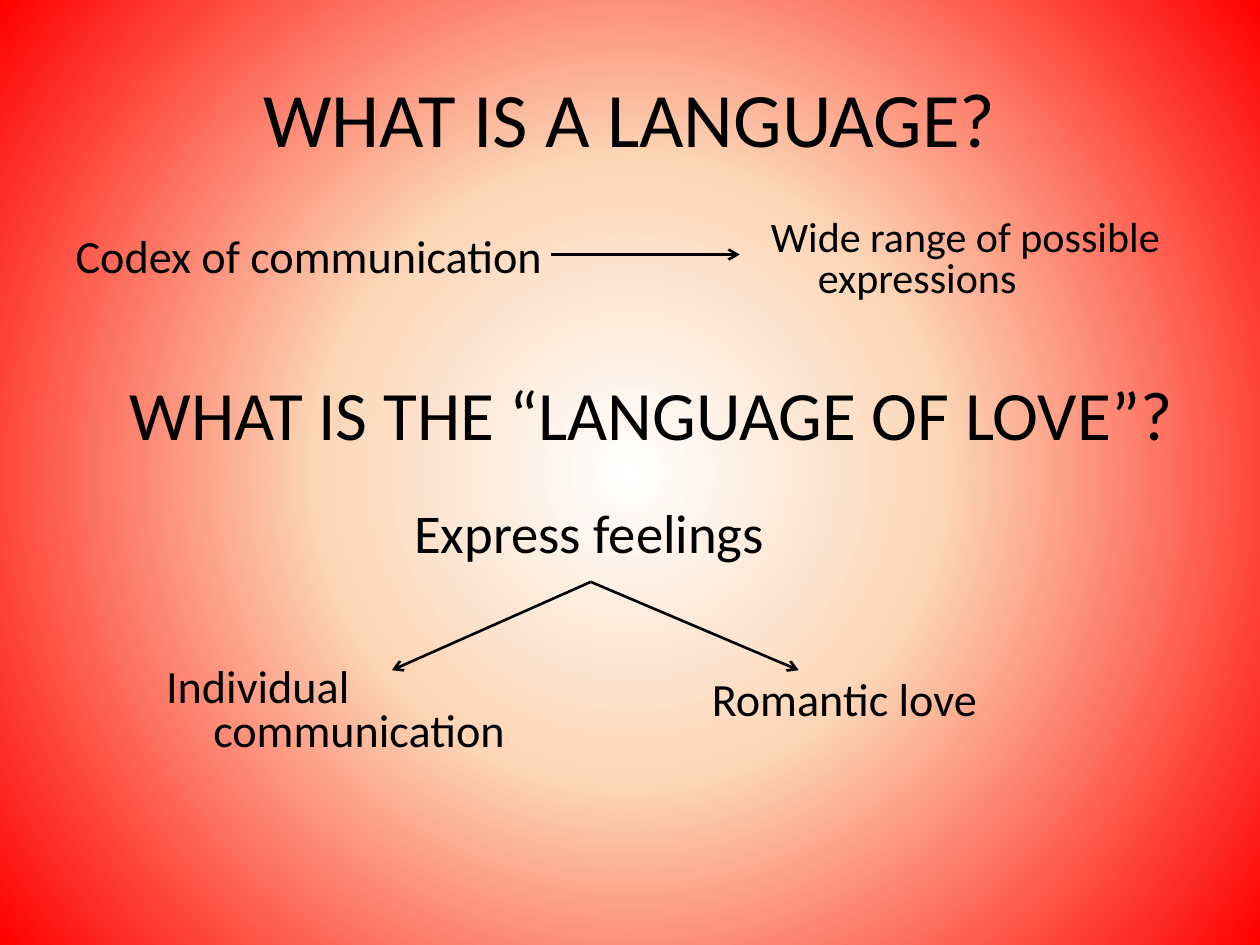
from dataclasses import dataclass

from lxml import etree
from pptx import Presentation
from pptx.dml.color import RGBColor
from pptx.enum.shapes import MSO_CONNECTOR
from pptx.enum.text import MSO_ANCHOR, MSO_AUTO_SIZE, PP_ALIGN
from pptx.oxml import parse_xml
from pptx.oxml.ns import nsdecls, qn
from pptx.util import Cm, Pt

STRAIGHT = MSO_CONNECTOR.STRAIGHT
TOP, MIDDLE = MSO_ANCHOR.TOP, MSO_ANCHOR.MIDDLE
LEFT, CENTER = PP_ALIGN.LEFT, PP_ALIGN.CENTER


@dataclass(frozen=True)
class Theme:
    font: str = "Calibri"
    ink: str = "000000"
    glow: tuple = ((0, "FFFFFF"), (40, "FCD5B5"), (100, "FF0000"))
    title: float = 44
    subtitle: float = 39.6
    feelings: float = 31.2
    item: float = 26.4
    small_item: float = 24
    line: float = 1.5


THEME = Theme()
INK = RGBColor.from_string(THEME.ink)
HANGING = Cm(0.95)
HEADING_SIZE = (22.86, 3.18)
ITEM_HEIGHT = 2.08


def write_text(shape, text, *, box, size, heading=False, line_spacing=1.0):
    """Place the shape at box (cm) and fill it with a heading or a hanging list item."""
    shape.left, shape.top, shape.width, shape.height = map(Cm, box)
    frame = shape.text_frame
    frame.word_wrap = True
    frame.auto_size = MSO_AUTO_SIZE.NONE
    frame.vertical_anchor = MIDDLE if heading else TOP
    paragraph = frame.paragraphs[0]
    paragraph.alignment = CENTER if heading else LEFT
    paragraph.line_spacing = line_spacing
    if not heading:
        paragraph.space_before = Pt(round(size * 0.2, 1))
        properties = paragraph._p.get_or_add_pPr()
        properties.set("marL", str(HANGING))
        properties.set("indent", str(-HANGING))
        etree.SubElement(properties, qn("a:buNone"))
    run = paragraph.add_run()
    run.text = text
    run.font.name = THEME.font
    run.font.size = Pt(size)
    run.font.color.rgb = INK


presentation = Presentation()
presentation.slide_width, presentation.slide_height = Cm(25.4), Cm(19.05)
slide = presentation.slides.add_slide(presentation.slide_layouts[1])

# Background: a glow from the centre of the slide
slide.background.fill.solid()
stops = "".join(
    f'<a:gs pos="{position * 1000}"><a:srgbClr val="{color}"/></a:gs>'
    for position, color in THEME.glow
)
gradient = parse_xml(
    f'<a:gradFill {nsdecls("a")} rotWithShape="1"><a:gsLst>{stops}</a:gsLst>'
    '<a:path path="circle"><a:fillToRect l="50000" t="50000" r="50000" b="50000"/></a:path>'
    "</a:gradFill>"
)
background = slide.element.find(".//" + qn("p:bgPr"))
background.replace(background[0], gradient)

# Title and first list item
write_text(slide.shapes.title, "WHAT IS A LANGUAGE?",
           box=(1.27, 0.76, *HEADING_SIZE), size=THEME.title, heading=True)
write_text(slide.placeholders[1], "Codex of communication",
           box=(1.27, 4.45, 10.03, ITEM_HEIGHT), size=THEME.item)

# Second heading
subtitle = slide.shapes.add_textbox(0, 0, 0, 0)
write_text(subtitle, "WHAT IS THE “LANGUAGE OF LOVE”?",
           box=(1.7, 6.73, *HEADING_SIZE), size=THEME.subtitle, heading=True)

# Remaining items: text, left, top, width, type size, line spacing
items = [
    ("Wide range of possible expressions", 15.29, 4.32, 8.79, THEME.small_item, 0.8),
    ("Individual communication", 3.1, 13.34, 7.59, THEME.item, 0.8),
    ("Express feelings", 8.1, 9.93, 7.8, THEME.feelings, 1.0),
    ("Romantic love", 14.1, 13.51, 6.2, THEME.item, 0.9),
]
for text, left, top, width, size, line_spacing in items:
    write_text(slide.shapes.add_textbox(0, 0, 0, 0), text,
               box=(left, top, width, ITEM_HEIGHT), size=size, line_spacing=line_spacing)

# Arrows: one across, two branching from the feelings
branch = (11.91, 11.73)
arrows = [
    ((11.1, 5.13), (14.91, 5.13)),
    (branch, (7.9, 13.51)),
    (branch, (16.1, 13.51)),
]
for start, end in arrows:
    arrow = slide.shapes.add_connector(STRAIGHT, *map(Cm, start + end))
    arrow.line.color.rgb = INK
    arrow.line.width = Pt(THEME.line)
    etree.SubElement(arrow.line._get_or_add_ln(), qn("a:tailEnd"), type="arrow")
    etree.SubElement(arrow._element.spPr, qn("a:effectLst"))

presentation.save("out.pptx")
